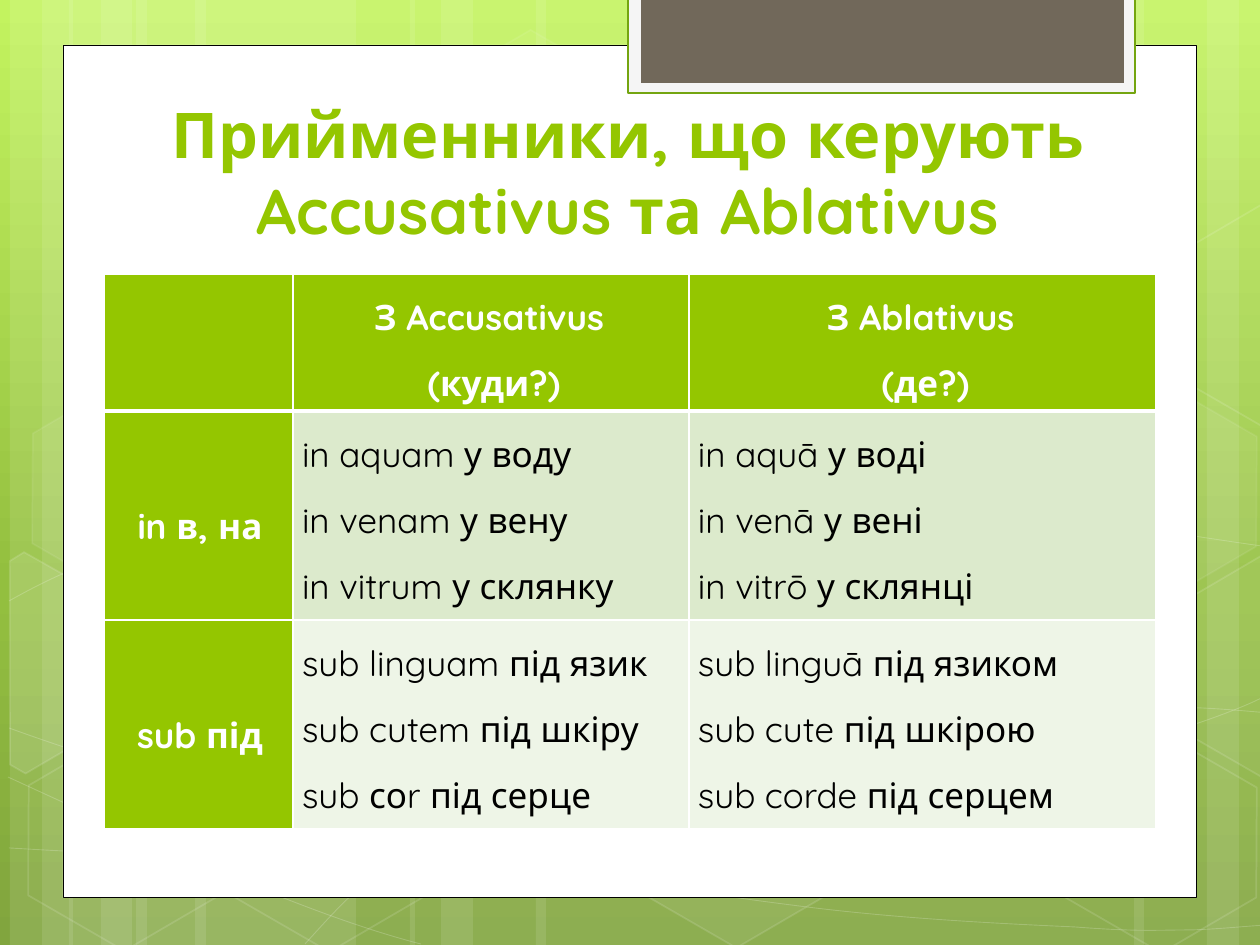
from copy import deepcopy

from lxml import etree
from pptx import Presentation
from pptx import util as u
from pptx.dml.color import RGBColor
from pptx.enum import shapes, text
from pptx.oxml.ns import qn

PX_PER_INCH = 126
FONT = "Quicksand"
COLORS = {
    "white": "FFFFFF", "black": "000000", "green": "94C600", "tab": "71685A",
    "tab_frame": "F5F5F5", "tab_line": "74A510", "row_1": "DCEACC", "row_2": "EEF5E7",
    "sky_top": "C3F35F", "sky_middle": "93BF3F", "sky_bottom": "81A53E",
}
ALIGN = text.PP_ALIGN

# Left and width of the full-height light bars
BARS = [(136, 220), (10, 63), (42, 105), (195, 220), (69, 63), (101, 105),
        (924, 220), (1207, 63), (1134, 105), (536, 388), (410, 63), (441, 105)]
# Start point, then two handles and an end point for each Bézier piece
WAVES = [
    [(9, 848), (77, 852), (145, 856), (239, 854), (334, 853), (451, 851), (577, 838),
     (703, 825), (882, 801), (998, 777), (1113, 753), (1231, 716), (1269, 694)],
    [(9, 601), (45, 581), (82, 562), (152, 543), (224, 524), (326, 496), (437, 488),
     (549, 479), (685, 478), (824, 488), (963, 498), (1193, 537), (1269, 547)],
    [(8, 777), (160, 847), (311, 916), (421, 944)],
    [(9, 728), (48, 742), (88, 756), (161, 776), (234, 795), (344, 827), (450, 848),
     (554, 869), (687, 892), (791, 905), (896, 919), (1008, 924), (1075, 927),
     (1140, 932), (1158, 930), (1191, 930), (1223, 929), (1246, 926), (1269, 925)],
    [(305, 944), (328, 919), (350, 893), (381, 871), (411, 848), (454, 823), (489, 805),
     (524, 787), (546, 780), (592, 767), (638, 755), (722, 737), (766, 728),
     (811, 719), (818, 719), (857, 717), (896, 713), (958, 709), (1000, 708),
     (1045, 707), (1116, 708), (1116, 708), (1144, 708), (1173, 708), (1201, 708),
     (1223, 709), (1245, 711), (1268, 713)],
]
# Left, top, fill opacity (None for no fill) and line opacity
HEXAGONS = [(421, 45, 4, 8), (626, 742, 6, 12), (14, 745, None, 12), (18, 393, 7, 8),
            (219, 746, None, 12), (949, 571, 10, 12), (1051, 747, None, 12),
            (1051, 396, 7, 8)]
# Hexagons cut by the slide's edge, before turning: left, top, corners, fill opacity
LEFT_CUT = [(0, 16), (8, 1), (119, 0), (174, 97), (120, 192), (102, 192)]
RIGHT_CUT = [(0, 95), (54, 0), (66, 0), (171, 182), (166, 191), (55, 191)]
CUT_HEXAGONS = [(-42, 578, LEFT_CUT, 10), (1155, 559, RIGHT_CUT, 4),
                (1155, 208, RIGHT_CUT, None)]
HEADERS = [[], ["З Accusativus ", "(куди?)"], ["З Ablativus ", "(де?)"]]
ROWS = [
    [["in в, на"],
     ["in aquam у воду", "in venam у вену", "in vitrum у склянку"],
     ["in aquā у воді", "in venā у вені", "in vitrō у склянці"]],
    [["sub під"],
     ["sub linguam під язик", "sub cutem під шкіру", "sub соr під серце"],
     ["sub linguā під язиком", "sub cute під шкірою ", "sub corde під серцем "]],
]


def px(length):
    return u.Inches(length / PX_PER_INCH)


def rgb(name):
    return RGBColor.from_string(COLORS[name])


def paint(fill, color, opacity=100):
    """Fill with a named colour; None means no fill."""
    if color is None:
        fill.background()
        return
    fill.solid()
    fill.fore_color.rgb = rgb(color)
    if opacity < 100:
        tint = fill._xPr.find(qn("a:solidFill"))[0]
        etree.SubElement(tint, qn("a:alpha"), val=str(opacity * 1000))


def bend(shape):
    """Turn each three straight pieces of an outline into one Bézier piece."""
    outline = shape._element.find(".//" + qn("a:path"))
    pieces = outline.findall(qn("a:lnTo"))
    for i in range(0, len(pieces), 3):
        curve = etree.SubElement(outline, qn("a:cubicBezTo"))
        for piece in pieces[i:i + 3]:
            curve.append(piece[0])
            outline.remove(piece)


def write(frame, lines, size=20, color="black", bold=False, align=ALIGN.JUSTIFY,
          spacing=1.5, indent=0):
    for i, line in enumerate(lines):
        para = frame.paragraphs[0] if i == 0 else frame.add_paragraph()
        para.alignment = align
        para.line_spacing = spacing
        if indent:
            para._p.get_or_add_pPr().set("marL", str(px(indent)))
        span = para.add_run()
        span.text = line
        span.font.name = FONT
        span.font.size = u.Pt(size)
        span.font.bold = bold
        span.font.color.rgb = rgb(color)


def add_borders(cell, bottom):
    for side, width in (("L", 1), ("R", 1), ("T", 1), ("B", bottom)):
        line = etree.SubElement(cell._tc.get_or_add_tcPr(), qn(f"a:ln{side}"),
                                w=str(u.Pt(width)))
        fill = etree.SubElement(line, qn("a:solidFill"))
        etree.SubElement(fill, qn("a:srgbClr"), val=COLORS["white"])


class Painter:
    def __init__(self, slide):
        self.slide = slide

    def background(self, stops):
        fill = self.slide.background.fill
        fill.gradient()
        fill.gradient_angle = 270
        stop_list = self.slide._element.find(".//" + qn("a:gsLst"))
        stop_list.insert(1, deepcopy(stop_list[0]))
        for stop, (position, color) in zip(fill.gradient_stops, stops):
            stop.position = position
            stop.color.rgb = rgb(color)

    def finish(self, shape, fill, opacity, line, width, line_opacity):
        shape.shadow.inherit = False
        paint(shape.fill, fill, opacity)
        paint(shape.line.fill, line, line_opacity)
        if line:
            shape.line.width = u.Pt(width)
        return shape

    def shape(self, box, kind=shapes.MSO_SHAPE.RECTANGLE, fill="white", opacity=100,
              line=None, width=1, line_opacity=100):
        shape = self.slide.shapes.add_shape(kind, *map(px, box))
        return self.finish(shape, fill, opacity, line, width, line_opacity)

    def outline(self, points, close=False, fill=None, opacity=100, width=1, line_opacity=100):
        start, *rest = [(px(x), px(y)) for x, y in points]
        builder = self.slide.shapes.build_freeform(*start)
        builder.add_line_segments(rest, close=close)
        return self.finish(builder.convert_to_shape(), fill, opacity, "white", width,
                           line_opacity)

    def title(self, box, line):
        title = self.slide.shapes.title
        title.left, title.top, title.width, title.height = map(px, box)
        self.slide.shapes._spTree.append(title._element)  # bring in front of the panel
        frame = title.text_frame
        frame.word_wrap = True
        frame.auto_size = text.MSO_AUTO_SIZE.NONE
        frame.vertical_anchor = text.MSO_ANCHOR.BOTTOM
        write(frame, [line], size=36, color="green", bold=True, align=ALIGN.CENTER, spacing=1.0)

    def table(self, left, top, widths, heights, rows):
        table = self.slide.shapes.add_table(len(heights), len(widths), px(left), px(top),
                                            px(sum(widths)), px(sum(heights))).table
        for column, width in zip(table.columns, widths):
            column.width = px(width)
        for r, (row, height) in enumerate(zip(rows, heights)):
            table.rows[r].height = px(height)
            for c, lines in enumerate(row):
                cell = table.cell(r, c)
                heading = r == 0 or c == 0
                cell.margin_left = cell.margin_right = px(9)
                cell.margin_top = cell.margin_bottom = 0
                add_borders(cell, bottom=3 if r == 0 else 1)
                paint(cell.fill, "green" if heading else f"row_{r}")
                if heading:
                    write(cell.text_frame, lines, color="white", bold=True,
                          align=ALIGN.CENTER, indent=6 if r == 0 else 3)
                else:
                    write(cell.text_frame, lines)
                if c == 0:
                    cell.vertical_anchor = text.MSO_ANCHOR.MIDDLE


def main():
    deck = Presentation()
    deck.slide_width, deck.slide_height = px(1260), px(945)
    painter = Painter(deck.slides.add_slide(deck.slide_layouts[5]))

    painter.background([(0, "sky_top"), (0.62, "sky_middle"), (1, "sky_bottom")])
    for left, width in BARS:
        painter.shape((left, 0, width, 945), opacity=10)
    for wave in WAVES:
        bend(painter.outline(wave, width=0.5, line_opacity=20))
    for left, top, opacity, line_opacity in HEXAGONS:
        hexagon = painter.shape((left, top, 220, 191), shapes.MSO_SHAPE.HEXAGON,
                                "white" if opacity else None, opacity or 100,
                                "white", line_opacity=line_opacity)
        hexagon.adjustments[0] = 0.285
        hexagon.rotation = 30
    for left, top, corners, opacity in CUT_HEXAGONS:
        points = [(left + x, top + y) for x, y in corners]
        hexagon = painter.outline(points, True, "white" if opacity else None,
                                  opacity or 100, line_opacity=12)
        hexagon.rotation = 30

    painter.shape((63, 45, 1134, 853), line="black", width=0.5)
    painter.shape((628, -2, 507, 95), fill="tab_frame", line="tab_line", width=1.25)
    painter.shape((641, -2, 483, 85), fill="tab")
    painter.title((144, 96, 968, 157), "Прийменники, що керують Accusativus та Ablativus")
    painter.table(104, 274, (189, 396, 467), (137, 209, 209), [HEADERS, *ROWS])
    deck.save("out.pptx")


if __name__ == "__main__":
    main()
